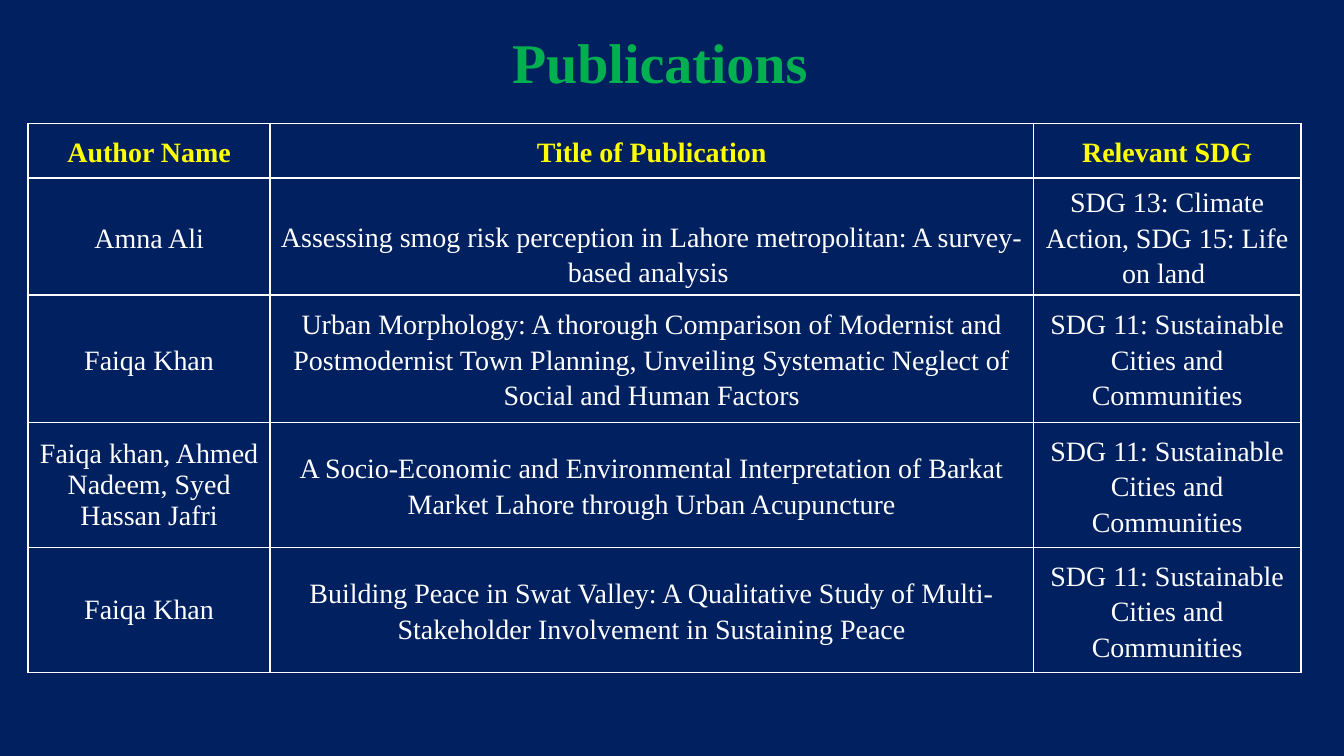
"""Build a slide listing publications, their authors and the related SDGs."""
from dataclasses import dataclass

from lxml import etree
from pptx import Presentation
from pptx import util as u
from pptx.dml.color import RGBColor
from pptx.enum import text
from pptx.oxml import ns

TITLE = "Publications"
HEADINGS = ("Author Name", "Title of Publication", "Relevant SDG")
CITIES = "SDG 11: Sustainable Cities and Communities"
PUBLICATIONS = [
    ("Amna Ali",
     "Assessing smog risk perception in Lahore metropolitan: A survey-based analysis ",
     "SDG 13: Climate Action, SDG 15: Life on land "),
    ("Faiqa Khan",
     "Urban Morphology: A thorough Comparison of Modernist and Postmodernist Town "
     "Planning, Unveiling Systematic Neglect of Social and Human Factors",
     CITIES),
    ("Faiqa khan, Ahmed Nadeem, Syed Hassan Jafri",
     "A Socio-Economic and Environmental Interpretation of Barkat Market Lahore "
     "through Urban Acupuncture",
     CITIES),
    ("Faiqa Khan",
     "Building Peace in Swat Valley: A Qualitative Study of Multi-Stakeholder "
     "Involvement in Sustaining Peace",
     CITIES),
]
COLUMN_WIDTHS = (1.8, 5.68, 1.99)
ROW_HEIGHTS = (0.36, 0.87, 0.95, 0.93, 0.93)
TABLE_LEFT, TABLE_TOP = 0.21, 0.92
HEADER_MARGIN = 0.07
LOWERED_CELL, LOWERED_MARGIN = (1, 1), 0.25
SINGLE_SPACED = {(3, 0), (4, 0)}


@dataclass(frozen=True)
class Theme:
    """Colours and type sizes of the slide."""
    font: str = "Times New Roman"
    background: str = "002060"
    title: str = "00B050"
    heading: str = "FFFF00"
    body: str = "FFFFFF"
    border: str = "FFFFFF"
    title_size: int = 30
    table_size: int = 15


THEME = Theme()


def write(para, words, size, color, bold, spacing):
    """Fill a centred paragraph with styled words."""
    para.text = words
    para.alignment = text.PP_ALIGN.CENTER
    para.line_spacing = spacing
    para.font.name = THEME.font
    para.font.size = u.Pt(size)
    para.font.bold = bold
    para.font.color.rgb = RGBColor.from_string(color)


def add_borders(cell):
    """Draw a thin line on all four sides of a cell."""
    properties = cell._tc.get_or_add_tcPr()
    for side in ("lnL", "lnR", "lnT", "lnB"):
        line = etree.SubElement(properties, ns.qn(f"a:{side}"), w=str(u.Pt(1)))
        fill = etree.SubElement(line, ns.qn("a:solidFill"))
        etree.SubElement(fill, ns.qn("a:srgbClr"), val=THEME.border)


def add_title(page):
    """Place the title across the top of the page."""
    box = page.shapes.add_textbox(0, 0, u.Inches(9.82), u.Inches(0.98))
    frame = box.text_frame
    frame.word_wrap = True
    frame.vertical_anchor = text.MSO_ANCHOR.MIDDLE
    frame.margin_left = frame.margin_right = u.Inches(0.07)
    frame.margin_top = frame.margin_bottom = u.Inches(0.04)
    write(frame.paragraphs[0], TITLE, THEME.title_size, THEME.title, True, 0.9)


def style_cell(cell, position, words):
    """Write one table cell with its margins, anchor and borders."""
    is_header = position[0] == 0
    margin = u.Inches(HEADER_MARGIN if is_header else 0)
    cell.margin_left = cell.margin_right = margin
    cell.margin_top = cell.margin_bottom = margin
    if position == LOWERED_CELL:
        cell.margin_top = u.Inches(LOWERED_MARGIN)
    anchors = text.MSO_ANCHOR
    cell.vertical_anchor = anchors.TOP if is_header else anchors.MIDDLE
    color = THEME.heading if is_header else THEME.body
    spacing = 1.0 if position in SINGLE_SPACED else 1.15
    write(cell.text_frame.paragraphs[0], words, THEME.table_size, color,
          is_header, spacing)
    add_borders(cell)
    cell.fill.background()


def add_publications(page):
    """Place the table of publications."""
    rows = [HEADINGS, *PUBLICATIONS]
    table = page.shapes.add_table(
        len(rows), len(HEADINGS), u.Inches(TABLE_LEFT), u.Inches(TABLE_TOP),
        u.Inches(sum(COLUMN_WIDTHS)), u.Inches(sum(ROW_HEIGHTS))).table
    table.first_row = table.horz_banding = False
    for column, width in zip(table.columns, COLUMN_WIDTHS):
        column.width = u.Inches(width)
    for row, height in zip(table.rows, ROW_HEIGHTS):
        row.height = u.Inches(height)
    for r, row in enumerate(rows):
        for c, words in enumerate(row):
            style_cell(table.cell(r, c), (r, c), words)


def main():
    """Build and save the deck."""
    deck = Presentation()
    deck.slide_width = u.Inches(10)
    deck.slide_height = deck.slide_width * 9 // 16
    page = deck.slides.add_slide(deck.slide_layouts[6])
    page.background.fill.solid()
    page.background.fill.fore_color.rgb = RGBColor.from_string(THEME.background)
    add_publications(page)
    add_title(page)
    deck.save("out.pptx")


if __name__ == "__main__":
    main()
